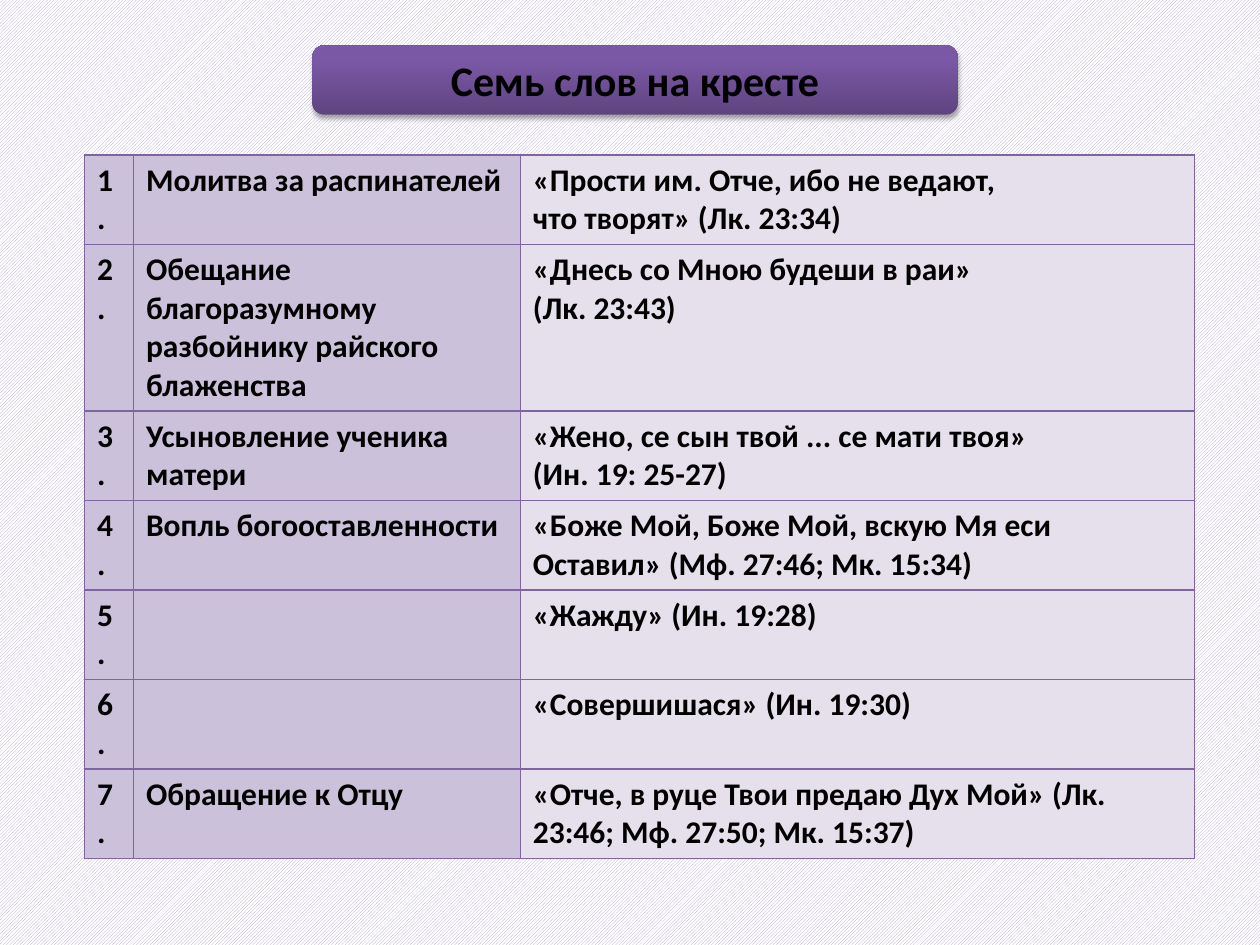
from dataclasses import dataclass

from pptx import Presentation, util as u
from pptx.dml.color import RGBColor
from pptx.enum import dml, shapes, text
from pptx.oxml import parse_xml
from pptx.oxml.ns import nsdecls

WIDE, HIGH = 10, 7.5
BLACK = RGBColor(0, 0, 0)
WHITE = RGBColor(255, 255, 255)
HATCH = RGBColor(0xB3, 0xA2, 0xC7)
DEEP = RGBColor(0x5F, 0x44, 0x80)
VIOLET = RGBColor(0x7B, 0x58, 0xA6)
EDGE = RGBColor(0x80, 0x64, 0xA2)
LILAC = RGBColor(0xCC, 0xC1, 0xDA)
PALE = RGBColor(0xE6, 0xE0, 0xEC)

COLS = (0.39, 3.07, 5.35)
TINTS = (LILAC, LILAC, PALE)
PAD, LINE = 0.1, 0.305  # row height = padding + lines of text


@dataclass
class Saying:
    theme: str
    quote: str
    lines: int


SAYINGS = (
    Saying("Молитва за распинателей",
           "«Прости им. Отче, ибо не ведают,\nчто творят» (Лк. 23:34)", 2),
    Saying("Обещание благоразумному разбойнику райского блаженства",
           "«Днесь со Мною будеши в раи»\n(Лк. 23:43)", 4),
    Saying("Усыновление ученика матери",
           "«Жено, се сын твой ... се мати твоя»\n(Ин. 19: 25-27)", 2),
    Saying("Вопль богооставленности",
           "«Боже Мой, Боже Мой, вскую Мя еси\nОставил» (Мф. 27:46; Мк. 15:34)", 2),
    Saying("", "«Жажду» (Ин. 19:28)", 1),
    Saying("", "«Совершишася» (Ин. 19:30)", 1),
    Saying("Обращение к Отцу",
           "«Отче, в руце Твои предаю Дух Мой» (Лк. 23:46; Мф. 27:50; Мк. 15:37)", 2),
)


def write(frame, words: str, size: float = 18, align=text.PP_ALIGN.LEFT) -> None:
    frame.text = words
    for para in frame.paragraphs:
        para.alignment = align
        font = para.font
        for run in para.runs:
            font = run.font
            font.name, font.size, font.bold = "Calibri", u.Pt(size), True
            font.color.rgb = BLACK


def border(cell, color: RGBColor, width: float) -> None:
    props = cell._tc.get_or_add_tcPr()
    for spot, side in enumerate(("lnL", "lnR", "lnT", "lnB")):
        props.insert(spot, parse_xml(
            f'<a:{side} {nsdecls("a")} w="{u.Pt(width)}"><a:solidFill>'
            f'<a:srgbClr val="{color}"/></a:solidFill></a:{side}>'))


def banner(slide, words: str) -> None:
    box = slide.shapes.add_shape(
        shapes.MSO_SHAPE.ROUNDED_RECTANGLE,
        u.Inches(2.48), u.Inches(0.36), u.Inches(5.12), u.Inches(0.55))
    box.line.fill.background()
    box.fill.gradient()
    box.fill.gradient_angle = 90
    for stop, (place, color) in zip(box.fill.gradient_stops,
                                    ((0, DEEP), (0.8, VIOLET))):
        stop.position, stop.color.rgb = place, color
    # Soft shadow straight below
    box._element.spPr.append(parse_xml(
        f'<a:effectLst {nsdecls("a")}><a:outerShdw blurRad="{u.Pt(3.1)}" '
        f'dist="{u.Pt(1.8)}" dir="5400000" rotWithShape="0">'
        '<a:srgbClr val="000000"><a:alpha val="35000"/></a:srgbClr>'
        '</a:outerShdw></a:effectLst>'))
    box.text_frame.vertical_anchor = text.MSO_ANCHOR.MIDDLE
    write(box.text_frame, words, size=24, align=text.PP_ALIGN.CENTER)


def listing(slide, sayings: tuple[Saying, ...]) -> None:
    highs = [PAD + LINE * item.lines for item in sayings]
    grid = slide.shapes.add_table(
        len(sayings), len(COLS), u.Inches(0.67), u.Inches(1.23),
        u.Inches(sum(COLS)), u.Inches(sum(highs))).table
    grid.first_row = grid.horz_banding = False
    for col, width in zip(grid.columns, COLS):
        col.width = u.Inches(width)
    for num, (row, high, item) in enumerate(zip(grid.rows, highs, sayings), 1):
        row.height = u.Inches(high)
        for cell, words, tint in zip(row.cells, (f"{num}.", item.theme, item.quote), TINTS):
            cell.fill.solid()
            cell.fill.fore_color.rgb = tint
            border(cell, EDGE, 1)
            write(cell.text_frame, words)


def main() -> None:
    deck = Presentation()
    deck.slide_width, deck.slide_height = u.Inches(WIDE), u.Inches(HIGH)
    slide = deck.slides.add_slide(deck.slide_layouts[6])

    # Hatched background
    back = slide.background.fill
    back.patterned()
    back.pattern = dml.MSO_PATTERN.LIGHT_UPWARD_DIAGONAL
    back.fore_color.rgb, back.back_color.rgb = HATCH, WHITE

    banner(slide, "Семь слов на кресте")
    listing(slide, SAYINGS)
    deck.save("out.pptx")


if __name__ == "__main__":
    main()
